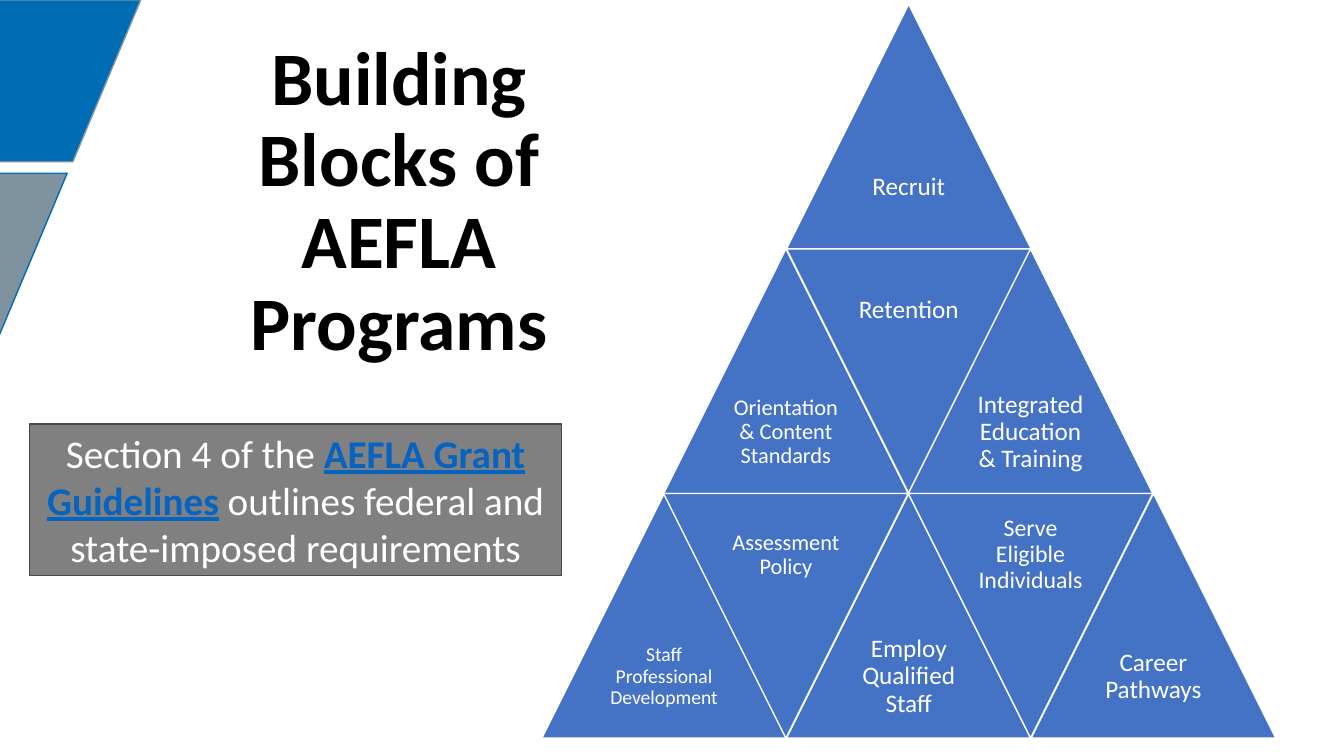
from dataclasses import dataclass

from pptx import Presentation
from pptx.dml.color import RGBColor
from pptx.enum.shapes import MSO_SHAPE
from pptx.enum.text import MSO_ANCHOR, MSO_AUTO_SIZE, PP_ALIGN
from pptx.util import Pt

PX = 9525  # EMU in one px, at 96 px to the inch


@dataclass(frozen=True)
class Theme:
    font: str = "Calibri"
    black: str = "000000"
    white: str = "FFFFFF"
    navy: str = "006CB3"
    steel: str = "7E929F"
    block: str = "4472C4"
    panel: str = "808080"
    edge: str = "484848"
    link: str = "0563C1"
    head: int = 54
    note: int = 28
    large: int = 18
    wide: int = 17
    mid: int = 16
    small: int = 14


T = Theme()
SIDE = 233  # width and height of one block
APEX = (749, 4)  # left and top of the highest block

# Each row runs from left to right, with blocks turned by turns.
ROWS = [
    [("Recruit", T.large)],
    [("Orientation & Content Standards", T.mid),
     ("Retention", T.large),
     ("Integrated Education & Training", T.large)],
    [("Staff Professional Development", T.small),
     ("Assessment Policy", T.mid),
     ("Employ Qualified Staff", T.large),
     ("Serve Eligible Individuals", T.wide),
     ("Career Pathways", T.large)],
]


def emu(*lengths):
    return [n * PX for n in lengths]


def write(shape, runs, size, color=T.white, bold=False, inset=(10, 5), lead=None):
    """Fill a shape with one centred paragraph of (text, overrides) runs."""
    frame = shape.text_frame
    frame.word_wrap = True
    frame.auto_size = MSO_AUTO_SIZE.NONE
    frame.vertical_anchor = MSO_ANCHOR.MIDDLE
    across, down = emu(*inset)
    frame.margin_left = frame.margin_right = across
    frame.margin_top = frame.margin_bottom = down
    para = frame.paragraphs[0]
    para.alignment = PP_ALIGN.CENTER
    if lead:
        para.line_spacing = lead
    for text, extra in runs:
        run = para.add_run()
        run.text = text
        font = run.font
        font.name = T.font
        font.size = Pt(size)
        font.bold = extra.get("bold", bold)
        font.underline = extra.get("under", False)
        font.color.rgb = RGBColor.from_string(extra.get("color", color))


def draw(shapes, kind, box, fill, line):
    shape = shapes.add_shape(kind, *emu(*box))
    shape.shadow.inherit = False
    shape.fill.solid()
    shape.fill.fore_color.rgb = RGBColor.from_string(fill)
    shape.line.color.rgb = RGBColor.from_string(line)
    shape.line.width = Pt(1)
    return shape


def block(shapes, left, top, label, size, down):
    """Draw a triangle, with its label in the wide half."""
    shape = draw(shapes, MSO_SHAPE.ISOSCELES_TRIANGLE,
                 (left, top, SIDE, SIDE), T.block, T.white)
    shape.rotation = 180 if down else 0
    half = SIDE // 2 + 1
    high = top if down else top + SIDE - half
    text = shapes.add_textbox(*emu(left + SIDE // 4, high, half, half))
    pad = 6 if size == T.small else 7
    write(text, [(label, {})], size, inset=(pad, pad), lead=0.9)


def pyramid(slide):
    shapes = slide.shapes.add_group_shape().shapes
    left, top = APEX
    for row, cells in enumerate(ROWS):
        for col, (label, size) in enumerate(cells):
            shift = (col - row) * SIDE // 2
            block(shapes, left + shift, top + row * SIDE,
                  label, size, down=col % 2 == 1)


def corner(slide):
    for left, top, fill, line in [(-189, 0, T.navy, T.steel),
                                  (-259, 165, T.steel, T.navy)]:
        draw(slide.shapes, MSO_SHAPE.FLOWCHART_DATA,
             (left, top, 323, 154), fill, line)


def title(slide):
    head = slide.shapes.title
    head.left, head.top, head.width, head.height = emu(146, 27, 468, 333)
    write(head, [("Building Blocks of AEFLA Programs", {})], T.head,
          color=T.black, bold=True, inset=(20, 5), lead=0.9)


def note(slide):
    panel = draw(slide.shapes, MSO_SHAPE.RECTANGLE,
                 (28, 404, 507, 144), T.panel, T.edge)
    write(panel, [
        ("Section 4 of the ", {}),
        ("AEFLA Grant Guidelines",
         {"color": T.link, "bold": True, "under": True}),
        (" outlines federal and state-imposed requirements", {}),
    ], T.note)


def main():
    deck = Presentation()
    deck.slide_width, deck.slide_height = emu(1280, 720)
    slide = deck.slides.add_slide(deck.slide_layouts[5])
    corner(slide)
    title(slide)
    pyramid(slide)
    note(slide)
    deck.save("out.pptx")


if __name__ == "__main__":
    main()
